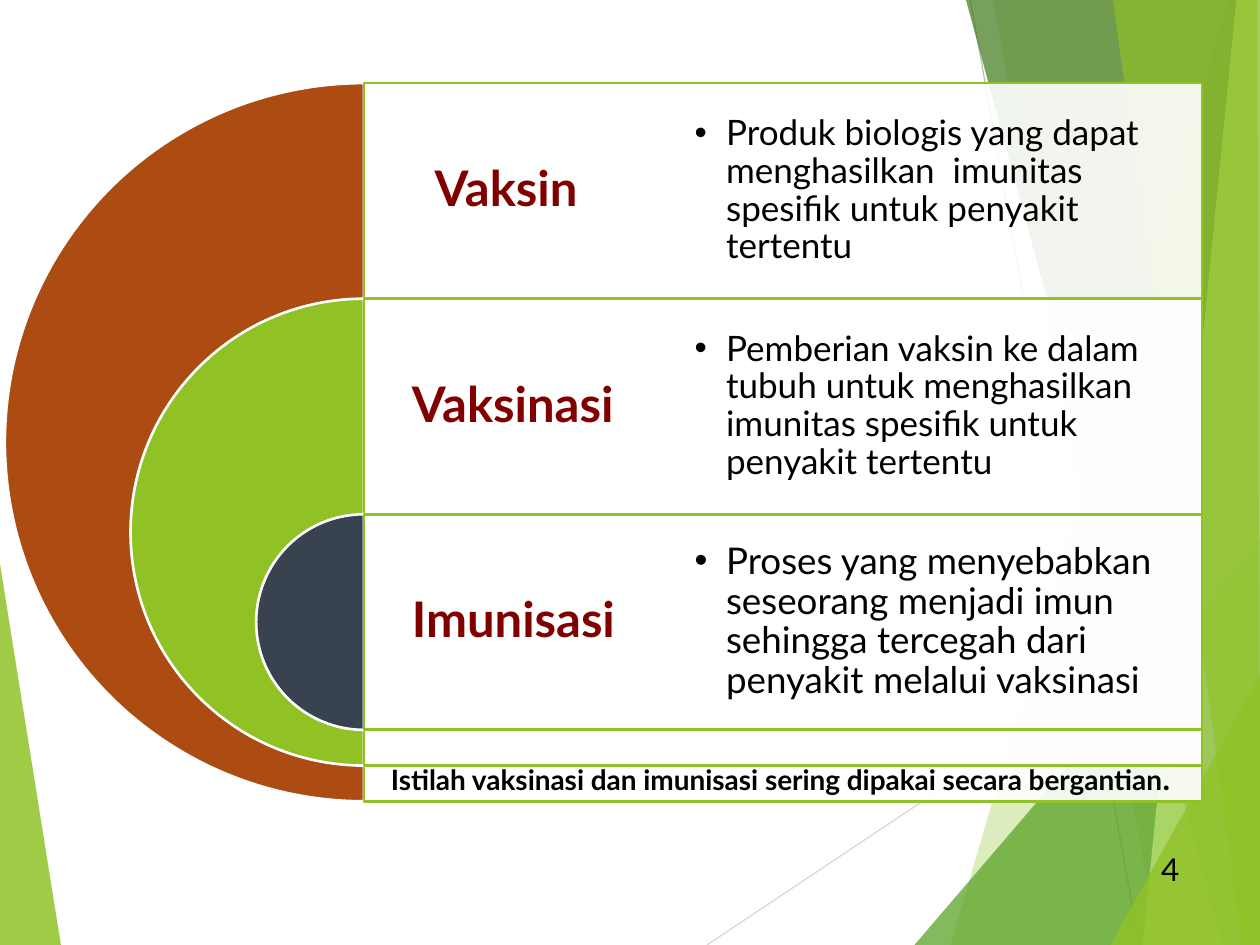
from dataclasses import dataclass

from lxml import etree
from pptx import Presentation
from pptx import util as u
from pptx.dml.color import RGBColor
from pptx.enum import shapes, text
from pptx.oxml.ns import qn


@dataclass(frozen=True)
class Theme:
    font: str = "Lato"
    ink: str = "000000"
    white: str = "FFFFFF"
    term: str = "800000"
    rust: str = "AD4C12"
    lime: str = "90C226"
    slate: str = "394350"
    leaf: str = "54A021"
    forest: str = "3F7819"
    pale: str = "C0E474"
    light_gray: str = "D9D9D9"
    gray: str = "BFBFBF"
    term_size: float = 28
    body_size: float = 20
    caption_size: float = 16
    number_size: float = 18
    outline: float = 1.5
    hairline: float = 0.75


class SlideBuilder:
    def __init__(self, slide, theme):
        self.slide = slide
        self.theme = theme

    def _paint(self, shape, color, opacity=100, line=None):
        shape.shadow.inherit = False
        shape.fill.solid()
        shape.fill.fore_color.rgb = RGBColor.from_string(color)
        if opacity < 100:
            fill = shape.fill._xPr.find(qn("a:solidFill"))
            etree.SubElement(fill[0], qn("a:alpha"), val=str(opacity * 1000))
        if line:
            shape.line.color.rgb = RGBColor.from_string(line)
            shape.line.width = u.Pt(self.theme.outline)
        else:
            shape.line.fill.background()

    def facet(self, corners, color, opacity):
        points = [(u.Pt(x), u.Pt(y)) for x, y in corners]
        outline = self.slide.shapes.build_freeform(*points[0])
        outline.add_line_segments(points[1:], close=True)
        self._paint(outline.convert_to_shape(), color, opacity)

    def line(self, x1, y1, x2, y2, color):
        rule = self.slide.shapes.add_connector(
            shapes.MSO_CONNECTOR.STRAIGHT, u.Pt(x1), u.Pt(y1), u.Pt(x2), u.Pt(y2))
        rule.line.color.rgb = RGBColor.from_string(color)
        rule.line.width = u.Pt(self.theme.hairline)
        etree.SubElement(rule._element.spPr, qn("a:effectLst"))

    def half_disc(self, center_x, top, diameter, color):
        disc = self.slide.shapes.add_shape(
            shapes.MSO_SHAPE.PIE, u.Pt(center_x - diameter / 2), u.Pt(top),
            u.Pt(diameter), u.Pt(diameter))
        disc.adjustments[0] = 54
        disc.adjustments[1] = 162
        self._paint(disc, color, line=self.theme.white)

    def panel(self, left, top, width, height):
        box = self.slide.shapes.add_shape(
            shapes.MSO_SHAPE.RECTANGLE, u.Pt(left), u.Pt(top), u.Pt(width), u.Pt(height))
        self._paint(box, self.theme.white, 90, self.theme.lime)

    def text(self, left, top, width, height, runs, align="LEFT", anchor="MIDDLE",
             insets=(7.2, 3.6), spacing=None, indent=0, bullet=None):
        """Each run is (words, size, color, bold)."""
        box = self.slide.shapes.add_textbox(
            u.Pt(left), u.Pt(top), u.Pt(width), u.Pt(height))
        frame = box.text_frame
        frame.word_wrap = True
        frame.vertical_anchor = getattr(text.MSO_ANCHOR, anchor)
        frame.margin_left = frame.margin_right = u.Pt(insets[0])
        frame.margin_top = frame.margin_bottom = u.Pt(insets[1])
        paragraph = frame.paragraphs[0]
        paragraph.alignment = getattr(text.PP_ALIGN, align)
        if spacing:
            paragraph.line_spacing = spacing
        props = paragraph._p.get_or_add_pPr()
        if indent:
            props.set("marL", str(u.Pt(indent)))
        if bullet:
            props.set("indent", str(-u.Pt(indent)))
            etree.SubElement(props, qn("a:buFont"), typeface="Arial")
            etree.SubElement(props, qn("a:buChar"), char=bullet)
        for words, size, color, bold in runs:
            run = paragraph.add_run()
            run.text = words
            run.font.name = self.theme.font
            run.font.size = u.Pt(size)
            run.font.bold = bold
            run.font.color.rgb = RGBColor.from_string(color)


def add_backdrop(page):
    t = page.theme
    page.facet([(-1, 316), (35, 541), (-1, 540)], t.lime, 85)
    page.line(404, 540, 720.5, 329, t.light_gray)
    page.line(554.5, 0, 651, 540, t.gray)
    right_facets = [
        ([(702, 0), (543, 540), (721, 540), (721, 0)], t.lime, 30),
        ([(567.5, 0), (661.5, 540), (721, 540), (721, 0)], t.lime, 20),
        ([(522.5, 540), (720.5, 309), (720.5, 540)], t.leaf, 72),
        ([(552, 0), (698.5, 540), (721, 540), (721, 0)], t.forest, 70),
        ([(706.5, 0), (653, 540), (721, 540), (720, 0)], t.pale, 70),
        ([(636, 0), (710, 540), (720, 540), (718.5, 0)], t.lime, 65),
        ([(634.5, 540), (720.5, 385), (720.5, 540)], t.lime, 80),
    ]
    for corners, color, opacity in right_facets:
        page.facet(corners, color, opacity)


def add_definitions(page):
    t = page.theme
    # Term, indent of the term, disc colour, meaning, meaning's size, width
    definitions = [
        ("Vaksin", 32, t.rust,
         "Produk biologis yang dapat menghasilkan  imunitas spesifik untuk "
         "penyakit tertentu", t.body_size, 301),
        ("Vaksinasi", 19, t.lime,
         "Pemberian vaksin ke dalam tubuh untuk menghasilkan imunitas spesifik "
         "untuk penyakit tertentu", t.body_size, 286),
        ("Imunisasi", 19, t.slate,
         "Proses yang menyebabkan seseorang menjadi imun sehingga tercegah dari "
         "penyakit melalui vaksinasi", t.body_size + 1, 295),
    ]
    axis, first_top, row, panel_width = 208, 47.5, 123.2, 479
    outer, shrink = 410.4, 143.6

    # Nested discs, panels and terms
    for i, (term, indent, color, *_) in enumerate(definitions):
        top, diameter = first_top + i * row, outer - i * shrink
        page.half_disc(axis, top, diameter, color)
        page.panel(axis, top, panel_width, diameter)
        page.text(axis, top, 240, row, [(term, t.term_size, t.term, True)],
                  insets=(8.4, 8.4), spacing=0.9, indent=indent)

    # Meanings
    for i, (*_, meaning, size, width) in enumerate(definitions):
        page.text(390.5, first_top + i * row, width, row,
                  [(meaning, size, t.ink, False)],
                  insets=(6.4, 6.4), spacing=0.9, indent=18, bullet="•")


def main():
    deck = Presentation()
    deck.slide_width, deck.slide_height = u.Pt(720), u.Pt(540)
    theme = Theme()
    page = SlideBuilder(deck.slides.add_slide(deck.slide_layouts[6]), theme)

    add_backdrop(page)
    add_definitions(page)

    # Caption and page number
    page.text(200, 430, 492, 29, [
        ("Istilah vaksinasi dan imunisasi sering dipakai secara bergantian",
         theme.caption_size, theme.ink, True),
        (".", theme.number_size, theme.ink, True),
    ], align="CENTER", anchor="TOP")
    page.text(641, 482, 40, 29, [("4", theme.number_size, theme.ink, False)],
              align="RIGHT")

    deck.save("out.pptx")


if __name__ == "__main__":
    main()
